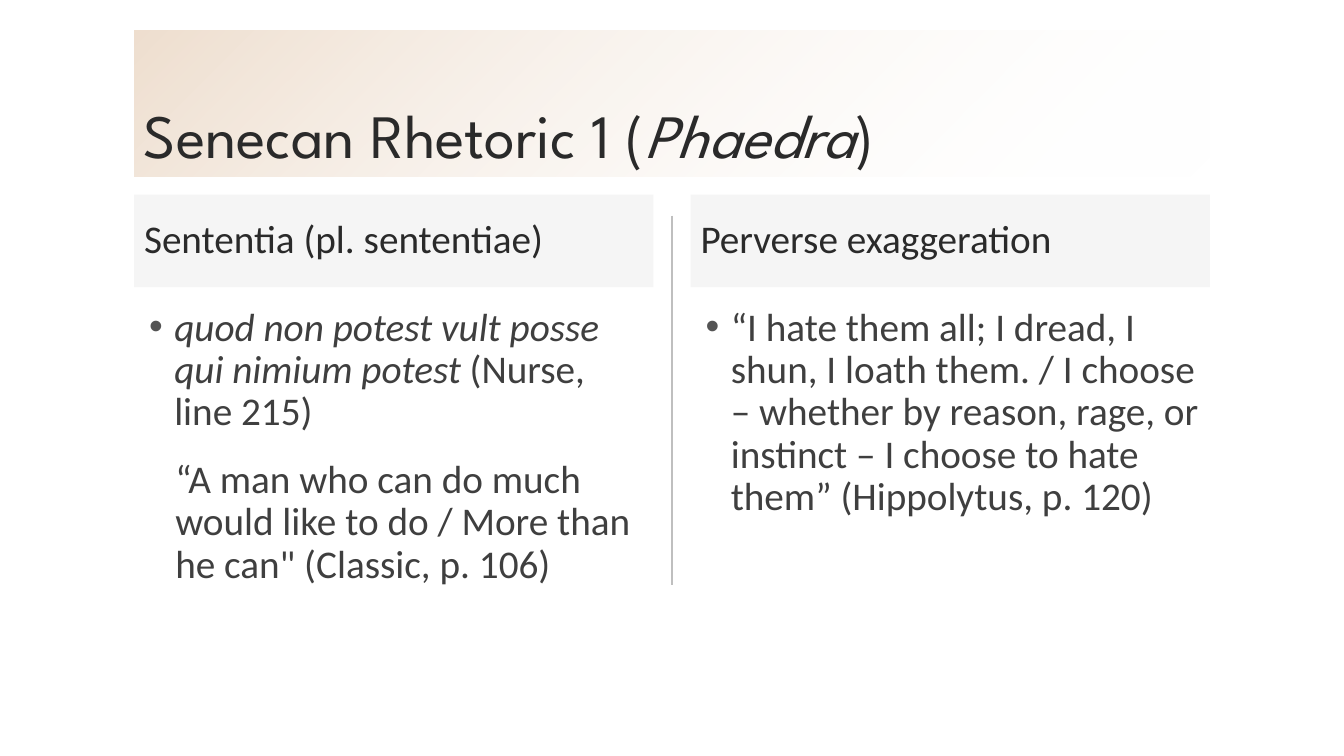
import dataclasses

import lxml.etree
import pptx
import pptx.dml.color
import pptx.enum.shapes
import pptx.enum.text
import pptx.oxml.ns
import pptx.util

Inches = pptx.util.Inches
Anchor = pptx.enum.text.MSO_ANCHOR
qn = pptx.oxml.ns.qn


@dataclasses.dataclass(frozen=True)
class Theme:
    """Colours, fonts and type sizes of the slide."""
    ink: str = "2A2A2A"
    text: str = "3F3F3F"
    mark: str = "545454"
    gray: str = "BFBFBF"
    tan: str = "CE9F71"
    white: str = "FFFFFF"
    head: str = "League Spartan"
    body: str = "Calibri"
    big: int = 44
    size: int = 28
    gap: int = 18


THEME = Theme()

TITLE = [("Senecan Rhetoric 1 (", False), ("Phaedra", True), (")", False)]
COLUMNS = [
    ("Sententia (pl. sententiae)", [
        (True, [("quod non potest vult posse qui nimium potest", True),
                (" (Nurse, line 215)", False)]),
        (False, [("“A man who can do much would like to do / More than "
                  "he can\" (Classic, p. 106)", False)]),
    ]),
    ("Perverse exaggeration", [
        (True, [("“I hate them all; I dread, I shun, I loath them. / I choose "
                 "– whether by reason, rage, or instinct – I choose to hate "
                 "them” (Hippolytus, p. 120)", False)]),
    ]),
]


def rgb(code):
    """Turn a hex code into a colour."""
    return pptx.dml.color.RGBColor.from_string(code)


def fade(shape, levels):
    """Set the opacity, in percent, of each fill colour in turn."""
    tints = shape.element.spPr.iter(qn("a:srgbClr"))
    for tint, level in zip(tints, levels):
        node = lxml.etree.SubElement(tint, qn("a:alpha"))
        node.set("val", str(level * 1000))


def write(para, parts, font, size, color):
    """Fill a paragraph with (text, italic) parts."""
    para.alignment = pptx.enum.text.PP_ALIGN.LEFT
    para.line_spacing = 0.9
    for text, slant in parts:
        run = para.add_run()
        run.text = text
        run.font.name = font
        run.font.size = pptx.util.Pt(size)
        run.font.color.rgb = rgb(color)
        run.font.italic = slant


def indent(para, left, first, bullet):
    """Indent a paragraph and give it a bullet if asked."""
    props = para._p.get_or_add_pPr()
    props.set("marL", str(Inches(left)))
    props.set("indent", str(Inches(first)))
    if not bullet:
        lxml.etree.SubElement(props, qn("a:buNone"))
        return
    tint = lxml.etree.SubElement(props, qn("a:buClr"))
    lxml.etree.SubElement(tint, qn("a:srgbClr")).set("val", THEME.mark)
    lxml.etree.SubElement(props, qn("a:buFont")).set("typeface", "Arial")
    lxml.etree.SubElement(props, qn("a:buChar")).set("char", "•")


def panel(slide, box, anchor):
    """Add a plain rectangle without line or shadow."""
    kind = pptx.enum.shapes.MSO_SHAPE.RECTANGLE
    shape = slide.shapes.add_shape(kind, *map(Inches, box))
    shape.shadow.inherit = False
    shape.line.fill.background()
    shape.text_frame.word_wrap = True
    shape.text_frame.vertical_anchor = anchor
    return shape


def banner(slide, box):
    """Draw the title on its fading band."""
    shape = panel(slide, box, Anchor.BOTTOM)
    shape.fill.gradient()
    shape.fill.gradient_angle = 315
    for stop, code in zip(shape.fill.gradient_stops, (THEME.tan, THEME.white)):
        stop.color.rgb = rgb(code)
    fade(shape, (34, 0))
    write(shape.text_frame.paragraphs[0], TITLE, THEME.head, THEME.big, THEME.ink)


def column(slide, box, head, items):
    """Draw a column: shaded heading above its text."""
    left, top, width, height = box
    bar, skip = 0.92, 1.07
    shape = panel(slide, (left, top, width, bar), Anchor.MIDDLE)
    shape.fill.solid()
    shape.fill.fore_color.rgb = rgb(THEME.gray)
    fade(shape, (15,))
    write(shape.text_frame.paragraphs[0], [(head, False)],
          THEME.body, THEME.size, THEME.ink)

    area = (left, top + skip, width, height - skip)
    frame = slide.shapes.add_textbox(*map(Inches, area)).text_frame
    frame.word_wrap = True
    for rank, (bullet, parts) in enumerate(items):
        para = frame.add_paragraph() if rank else frame.paragraphs[0]
        write(para, parts, THEME.body, THEME.size, THEME.text)
        para.space_before = pptx.util.Pt(THEME.gap)
        left, first = (0.3, -0.25) if bullet else (0.31, 0)
        indent(para, left, first, bullet)


def divide(slide, x, top, end):
    """Draw the upright rule between the columns."""
    kind = pptx.enum.shapes.MSO_CONNECTOR.STRAIGHT
    line = slide.shapes.add_connector(kind, *map(Inches, (x, top, x, end)))
    line.line.color.rgb = rgb(THEME.gray)
    line.line.width = pptx.util.Pt(1)
    lxml.etree.SubElement(line.element.spPr, qn("a:effectLst"))


def main():
    """Build the slide and save it."""
    deck = pptx.Presentation()
    deck.slide_width, deck.slide_height = Inches(13.33), Inches(7.5)
    slide = deck.slides.add_slide(deck.slide_layouts[6])
    left, width, wide = 1.33, 10.67, 5.15
    divide(slide, left + width / 2, 2.14, 5.8)
    banner(slide, (left, 0.3, width, 1.45))
    for rank, (head, items) in enumerate(COLUMNS):
        x = left + rank * (width - wide)
        column(slide, (x, 1.93, wide, 4.82), head, items)
    deck.save("out.pptx")


if __name__ == "__main__":
    main()
